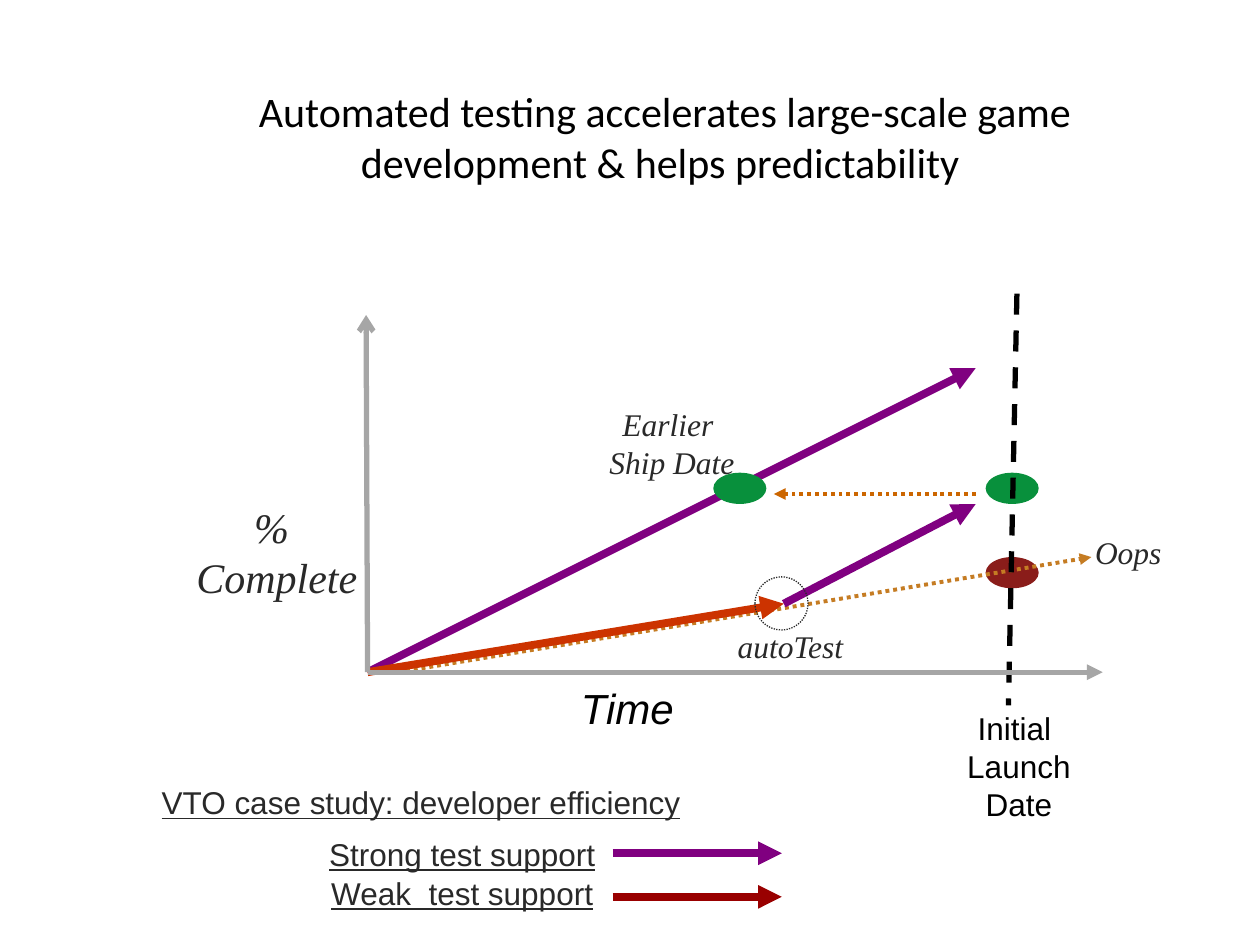
from lxml import etree
from pptx import Presentation
from pptx import util as u
from pptx.dml.color import RGBColor
from pptx.enum import dml, shapes, text
from pptx.oxml.ns import qn

COLORS = {
    "ink": "000000", "label": "292929", "axis": "A6A6A6", "strong": "800080",
    "weak": "CC3300", "weak_key": "990000", "oops": "8A1D1A", "shipped": "08903C",
    "drift": "C57C23", "gain": "CC6600",
}
DOTS = dml.MSO_LINE.ROUND_DOT
DASHES = dml.MSO_LINE.DASH
CENTER, LEFT, RIGHT = text.PP_ALIGN.CENTER, text.PP_ALIGN.LEFT, text.PP_ALIGN.RIGHT
SERIF = "Times New Roman"


def rgb(name):
    """Return the palette colour of the given name."""
    return RGBColor.from_string(COLORS[name])


def add_line(slide, box, start, end, color, width, arrow="triangle", dash=None):
    """Draw a line between two points relative to the box."""
    ends = [u.Cm(origin + offset) for point in (start, end) for origin, offset in zip(box, point)]
    line = slide.shapes.add_connector(shapes.MSO_CONNECTOR.STRAIGHT, *ends)
    line.line.color.rgb = rgb(color)
    line.line.width = u.Pt(width)
    if dash:
        line.line.dash_style = dash
    properties = line._element.spPr
    if arrow:
        etree.SubElement(properties.find(qn("a:ln")), qn("a:tailEnd"), type=arrow)
    etree.SubElement(properties, qn("a:effectLst"))


def add_oval(slide, box, left, top, height=0.63, fill=None):
    """Draw a filled milestone, or a dotted ring when no fill is given."""
    oval = slide.shapes.add_shape(
        shapes.MSO_SHAPE.OVAL, u.Cm(box[0] + left), u.Cm(box[1] + top), u.Cm(1.07), u.Cm(height))
    oval.shadow.inherit = False
    if fill:
        oval.fill.solid()
        oval.fill.fore_color.rgb = rgb(fill)
        oval.line.fill.background()
    else:
        oval.fill.background()
        oval.line.color.rgb = rgb("label")
        oval.line.width = u.Pt(0.75)
        oval.line.dash_style = DOTS


def add_label(slide, box, place, lines, size=18, font="Arial", color="label",
              align=CENTER, italic=False, underline=False, wrap=False):
    """Write one paragraph per line at a place relative to the box."""
    left, top, width, height = place
    label = slide.shapes.add_textbox(
        u.Cm(box[0] + left), u.Cm(box[1] + top), u.Cm(width), u.Cm(height))
    frame = label.text_frame
    frame.word_wrap = wrap
    frame.auto_size = text.MSO_AUTO_SIZE.NONE if wrap else text.MSO_AUTO_SIZE.SHAPE_TO_FIT_TEXT
    frame.vertical_anchor = text.MSO_ANCHOR.MIDDLE if wrap else text.MSO_ANCHOR.TOP
    for index, line in enumerate(lines):
        paragraph = frame.add_paragraph() if index else frame.paragraphs[0]
        paragraph.alignment = align
        run = paragraph.add_run()
        run.text = line
        run.font.size = u.Pt(size)
        run.font.name = font
        run.font.color.rgb = rgb(color)
        run.font.italic = italic
        run.font.underline = underline


def add_title(slide, box):
    """Write the slide title in the box."""
    headline = "Automated testing accelerates large-scale game development & helps predictability "
    add_label(slide, box, (0, 0, *box[2:]), [headline], 24, "Calibri", "ink", wrap=True)


def add_progress_plot(slide, box):
    """Draw completion over time with its milestones and labels."""
    width, height = box[2:]
    origin = (0.03, height)
    turning_point = (8.42, 5.82)
    strong_end = 12.29

    add_oval(slide, box, 12.49, 4.88, fill="oops")
    add_oval(slide, box, 12.49, 3.18, fill="shipped")
    add_line(slide, box, (0.65, height), (14.62, 4.88), "drift", 2.25, dash=DOTS)
    add_line(slide, box, origin, (strong_end, 1.07), "strong", 4.5)
    add_label(slide, box, (4.08, 7.29, 2.41, 1.27), ["Time"], 24, color="ink",
              align=LEFT, italic=True)
    add_line(slide, box, (13.12, -0.43), (12.95, 7.87), "ink", 3, arrow=None, dash=DASHES)
    add_label(slide, box, (11.85, 7.82, 2.62, 2.57), ["Initial ", "Launch", "Date"], color="ink")
    add_line(slide, box, origin, turning_point, "weak", 4.5)
    add_line(slide, box, origin, (0, 0), "axis", 3, arrow="arrow")
    add_label(slide, box, (14.44, 4.27, 1.85, 1.02), ["Oops"], font=SERIF, italic=True)
    add_line(slide, box, (strong_end, 3.61), (8.22, 3.61), "gain", 2.25, dash=DOTS)
    add_oval(slide, box, 7, 3.18, fill="shipped")
    add_label(slide, box, (4.64, 1.7, 3.05, 1.8), ["Earlier ", "Ship Date"],
              font=SERIF, italic=True)
    add_label(slide, box, (-3.69, 3.63, 3.78, 2.31), ["% ", "Complete"], 24, SERIF, italic=True)
    add_line(slide, box, origin, (width, height), "axis", 3)
    add_line(slide, box, turning_point, (strong_end, 3.81), "strong", 4.5)
    add_oval(slide, box, 7.84, 5.28, height=1.07)
    add_label(slide, box, (7.21, 6.17, 2.69, 1.02), ["autoTest"], font=SERIF, italic=True)


def add_legend(slide, box):
    """Write the case study heading and the key to both lines."""
    row = 1.02
    add_label(slide, box, (0, 0, 11, row), ["VTO case study: developer efficiency"],
              align=RIGHT, underline=True)
    entries = [
        ("Strong test support", "strong", 3.41, 1.04, 5.87, 1.53),
        ("Weak  test support", "weak_key", 3.41, 1.83, 5.83, 2.41),
    ]
    for name, color, left, top, width, line_top in entries:
        add_label(slide, box, (left, top, width, row), [name], align=RIGHT, underline=True)
        add_line(slide, box, (9.38, line_top), (box[2], line_top), color, 4.5)


def main():
    """Build the slide and save it."""
    deck = Presentation()
    deck.slide_width, deck.slide_height = u.Cm(25.4), u.Cm(19.05)
    slide = deck.slides.add_slide(deck.slide_layouts[6])
    add_title(slide, (3.56, 1.48, 19.69, 2.54))
    add_progress_plot(slide, (7.38, 6.35, 14.85, 7.2))
    add_legend(slide, (2.97, 15.67, 12.79, 2.85))
    deck.save("out.pptx")


if __name__ == "__main__":
    main()
